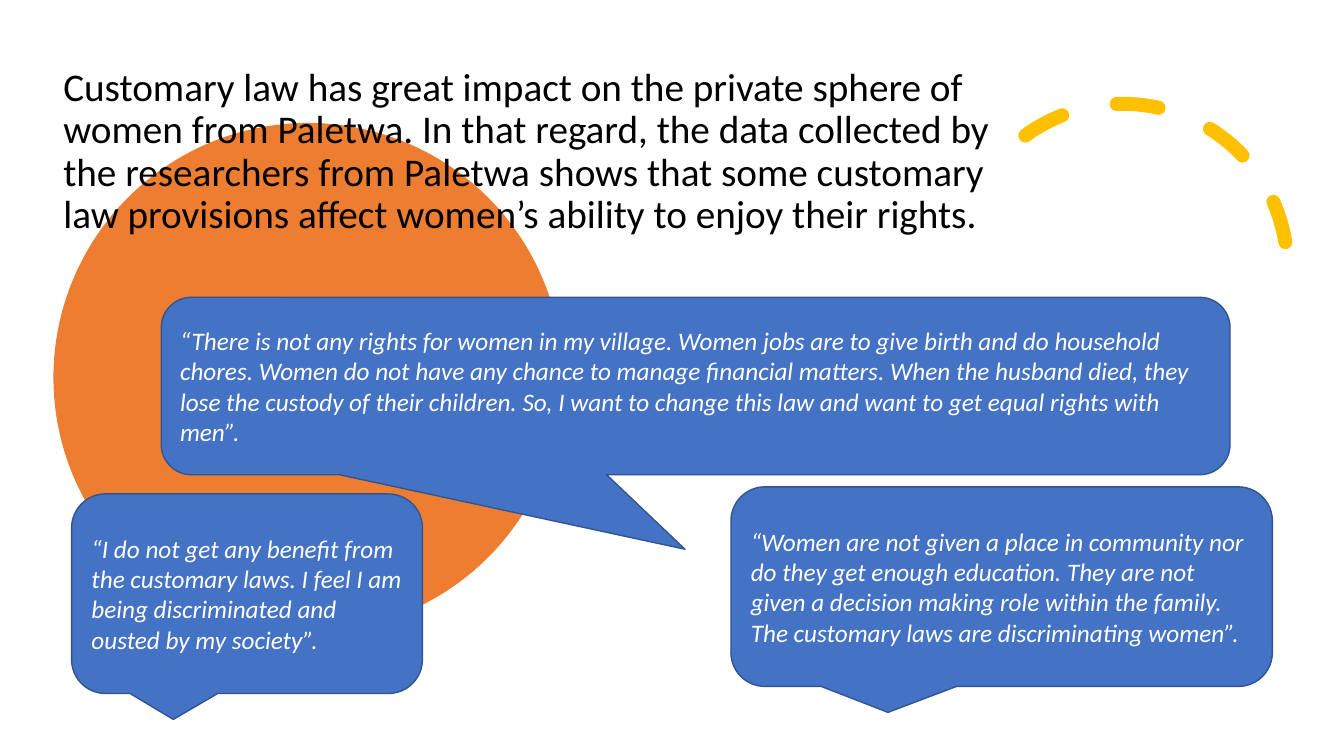
from lxml import etree
from pptx import Presentation
from pptx.dml.color import RGBColor
from pptx.enum.dml import MSO_LINE
from pptx.enum.shapes import MSO_SHAPE as SHAPE
from pptx.enum.text import MSO_ANCHOR as ANCHOR, PP_ALIGN as ALIGN
from pptx.util import Inches, Pt

COLORS = {"circle": "ED7D31", "arc": "FFC000", "callout": "4472C4",
          "outline": "325491", "body": "000000", "quote": "FFFFFF"}
FONT = "Calibri"
BODY = ("Customary law has great impact on the private sphere of women from Paletwa. "
        "In that regard, the data collected by the researchers from Paletwa shows that "
        "some customary law provisions affect women’s ability to enjoy their rights.")
SHORT_TAIL = (-0.21, 0.63, 0.17)
QUOTES = [
    ("“I do not get any benefit from the customary laws. I feel I am being "
     "discriminated and ousted by my society”.",
     (0.71, 4.9, 3.48, 1.98), SHORT_TAIL),
    ("“Women are not given a place in community nor do they get enough education. "
     "They are not given a decision making role within the family. The customary "
     "laws are discriminating women”.",
     (7.25, 4.83, 5.37, 1.98), SHORT_TAIL),
    ("“There is not any rights for women in my village. Women jobs are to give birth "
     "and do household chores. Women do not have any chance to manage financial "
     "matters. When the husband died, they lose the custody of their children. So, I "
     "want to change this law and want to get equal rights with men”.",
     (1.6, 2.95, 10.6, 1.76), (-0.01, 0.92, 0.17)),
]


def rgb(name):
    return RGBColor.from_string(COLORS[name])


def add_shape(s, kind, box, fill=None, line=None, width=1):
    sp = s.shapes.add_shape(kind, *map(Inches, box))
    sp.shadow.inherit = False
    if fill:
        sp.fill.solid()
        sp.fill.fore_color.rgb = rgb(fill)
    else:
        sp.fill.background()
    if line:
        sp.line.color.rgb = rgb(line)
        sp.line.width = Pt(width)
    else:
        sp.line.fill.background()
    return sp


def adjust(sp, values):
    for i, value in enumerate(values):
        sp.adjustments[i] = value


def write(sp, text, size, color, italic=False):
    tf = sp.text_frame
    tf.word_wrap = True
    p = tf.paragraphs[0]
    p.text = text
    p.alignment = ALIGN.LEFT
    p.font.name = FONT
    p.font.size = Pt(size)
    p.font.italic = italic
    p.font.color.rgb = rgb(color)
    return p


def main():
    prs = Presentation()
    prs.slide_width, prs.slide_height = Inches(13.33), Inches(7.5)
    s = prs.slides.add_slide(prs.slide_layouts[6])

    add_shape(s, SHAPE.OVAL, (0.53, 1.22, 5.05, 5.05), "circle")

    arc = add_shape(s, SHAPE.ARC, (9.5, 1.03, 3.27, 3.27), line="arc", width=10)
    adjust(arc, (158.17, 17.81))
    arc.rotation = 330.2
    arc.line.dash_style = MSO_LINE.DASH
    ln = arc.line._get_or_add_ln()
    ln.set("cap", "rnd")
    etree.SubElement(ln, ln.tag.replace("}ln", "}round"))

    body = s.shapes.add_textbox(*map(Inches, (0.53, 0.62, 9.54, 2.52)))
    p = write(body, BODY, 28, "body")
    p.line_spacing = 0.9
    p.space_before = Pt(10)

    for text, box, tail in QUOTES:
        sp = add_shape(s, SHAPE.ROUNDED_RECTANGULAR_CALLOUT, box, "callout", "outline")
        adjust(sp, tail)
        sp.text_frame.vertical_anchor = ANCHOR.MIDDLE
        write(sp, text, 18, "quote", italic=True).space_after = Pt(6)

    prs.save("out.pptx")


if __name__ == "__main__":
    main()
